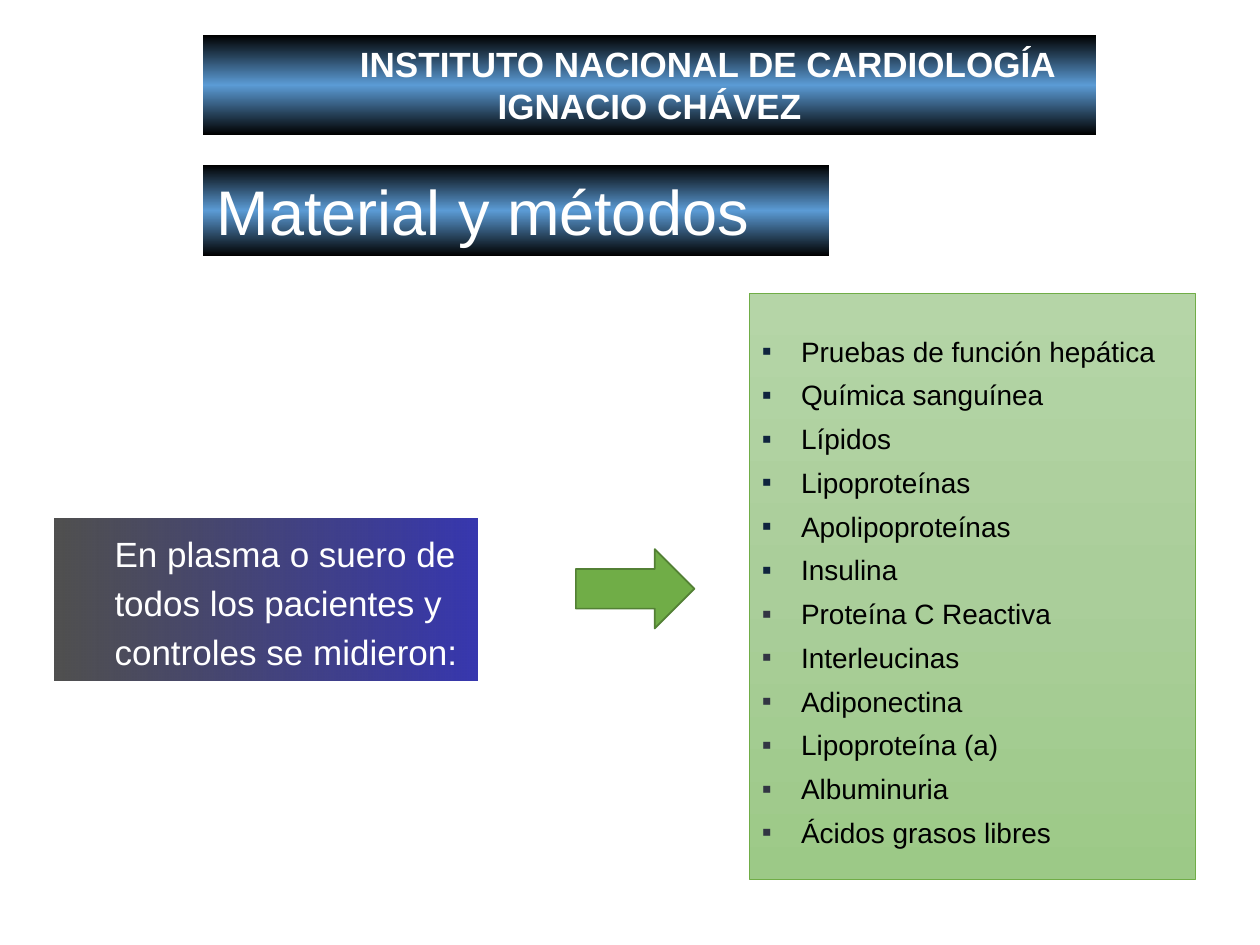
from lxml.etree import SubElement
from pptx import Presentation
from pptx.dml.color import RGBColor
from pptx.enum.shapes import MSO_SHAPE as Shape
from pptx.enum.text import MSO_ANCHOR as Anchor, MSO_AUTO_SIZE as AutoSize, PP_ALIGN as Align
from pptx.oxml.ns import qn
from pptx.util import Cm, Pt

COLORS = {
    "white": "FFFFFF", "black": "000000", "blue": "5B9BD5", "navy": "000099",
    "green": "70AD47", "dark green": "538035",
    "light green": "B5D5A7", "mid green": "AACE9A", "deep green": "9CC987",
    "bullet": "0F243E", "late bullet": "323543",
}
BANNER_STOPS = [(0, "black", 100), (50, "blue", 100), (100, "black", 100)]
PANEL_STOPS = [(0, "light green", 100), (50, "mid green", 100), (100, "deep green", 100)]
SAMPLE_STOPS = [(0, "black", 69), (100, "navy", 79)]


def add_gradient_box(left, top, width, height, stops, angle):
    """Add a borderless rectangle; each stop is (position, colour, opacity) in percent."""
    shape = slide.shapes.add_shape(Shape.RECTANGLE, Cm(left), Cm(top), Cm(width), Cm(height))
    shape.shadow.inherit = False
    shape.line.fill.background()
    shape.fill.gradient()
    shape.fill.gradient_angle = angle
    stop_list = shape._element.spPr.find(qn("a:gradFill")).find(qn("a:gsLst"))
    for old_stop in list(stop_list):
        stop_list.remove(old_stop)
    for position, color, opacity in stops:
        stop = SubElement(stop_list, qn("a:gs"), pos=str(position * 1000))
        rgb = SubElement(stop, qn("a:srgbClr"), val=COLORS[color])
        if opacity < 100:
            SubElement(rgb, qn("a:alpha"), val=str(opacity * 1000))
    shape.text_frame.word_wrap = True
    shape.text_frame.vertical_anchor = Anchor.TOP
    return shape


def write_lines(shape, lines, size, color, align=Align.LEFT, bold=False):
    """Fill a shape with one paragraph per line and return the paragraphs."""
    shape.text_frame.text = "\n".join(lines)
    for paragraph in shape.text_frame.paragraphs:
        paragraph.alignment = align
        for run in paragraph.runs:
            run.font.name = "Arial"
            run.font.size = Pt(size)
            run.font.bold = bold
            run.font.color.rgb = RGBColor.from_string(COLORS[color])
    return shape.text_frame.paragraphs


presentation = Presentation()
presentation.slide_width, presentation.slide_height = Cm(25.4), Cm(19.05)
slide = presentation.slides.add_slide(presentation.slide_layouts[6])

# Arrow from the samples to the tests
arrow = slide.shapes.add_shape(Shape.RIGHT_ARROW, Cm(11.61), Cm(11.07), Cm(2.39), Cm(1.6))
arrow.shadow.inherit = False
arrow.fill.solid()
arrow.fill.fore_color.rgb = RGBColor.from_string(COLORS["green"])
arrow.line.color.rgb = RGBColor.from_string(COLORS["dark green"])
arrow.line.width = Pt(1)

# List of laboratory tests
tests = [
    "Pruebas de función hepática", "Química sanguínea", "Lípidos", "Lipoproteínas",
    "Apolipoproteínas", "Insulina", "Proteína C Reactiva", "Interleucinas",
    "Adiponectina", "Lipoproteína (a)", "Albuminuria", "Ácidos grasos libres",
]
panel = add_gradient_box(15.11, 5.92, 8.99, 11.81, PANEL_STOPS, 270)
panel.line.color.rgb = RGBColor.from_string(COLORS["green"])
panel.line.width = Pt(0.5)
panel.text_frame.vertical_anchor = Anchor.MIDDLE
for index, paragraph in enumerate(write_lines(panel, tests, 16, "black")):
    properties = paragraph._p.get_or_add_pPr()
    properties.set("marL", str(Cm(0.79)))
    properties.set("indent", str(Cm(-0.79)))
    bullet_color = SubElement(properties, qn("a:buClr"))
    SubElement(bullet_color, qn("a:srgbClr"), val=COLORS["bullet" if index < 6 else "late bullet"])
    SubElement(properties, qn("a:buFont"), typeface="Arial")
    SubElement(properties, qn("a:buChar"), char="▪")
    paragraph.line_spacing = Pt(25)

# Sample description
sample = add_gradient_box(1.09, 10.46, 8.53, 3.25, SAMPLE_STOPS, 0)
sample.text_frame.auto_size = AutoSize.SHAPE_TO_FIT_TEXT
sample_text = "En plasma o suero de todos los pacientes y controles se midieron:"
for paragraph in write_lines(sample, [sample_text], 20, "white"):
    paragraph.line_spacing = Pt(28)
    paragraph._p.get_or_add_pPr().set("marL", str(Cm(0.97)))

# Institute banner and slide title
institute = add_gradient_box(4.09, 0.71, 18.01, 2.01, BANNER_STOPS, 270)
title = add_gradient_box(4.09, 3.33, 12.62, 1.83, BANNER_STOPS, 270)
for banner in (institute, title):
    frame = banner.text_frame
    frame.margin_left = frame.margin_right = Cm(0.28)
    frame.margin_top = frame.margin_bottom = Cm(0.15)
    frame.auto_size = AutoSize.SHAPE_TO_FIT_TEXT
institute_lines = write_lines(
    institute, ["INSTITUTO NACIONAL DE CARDIOLOGÍA", "IGNACIO CHÁVEZ"], 20, "white", Align.CENTER, True)
institute_lines[0]._p.get_or_add_pPr().set("marL", str(Cm(2.36)))
write_lines(title, ["Material y métodos"], 36, "white")

presentation.save("out.pptx")
